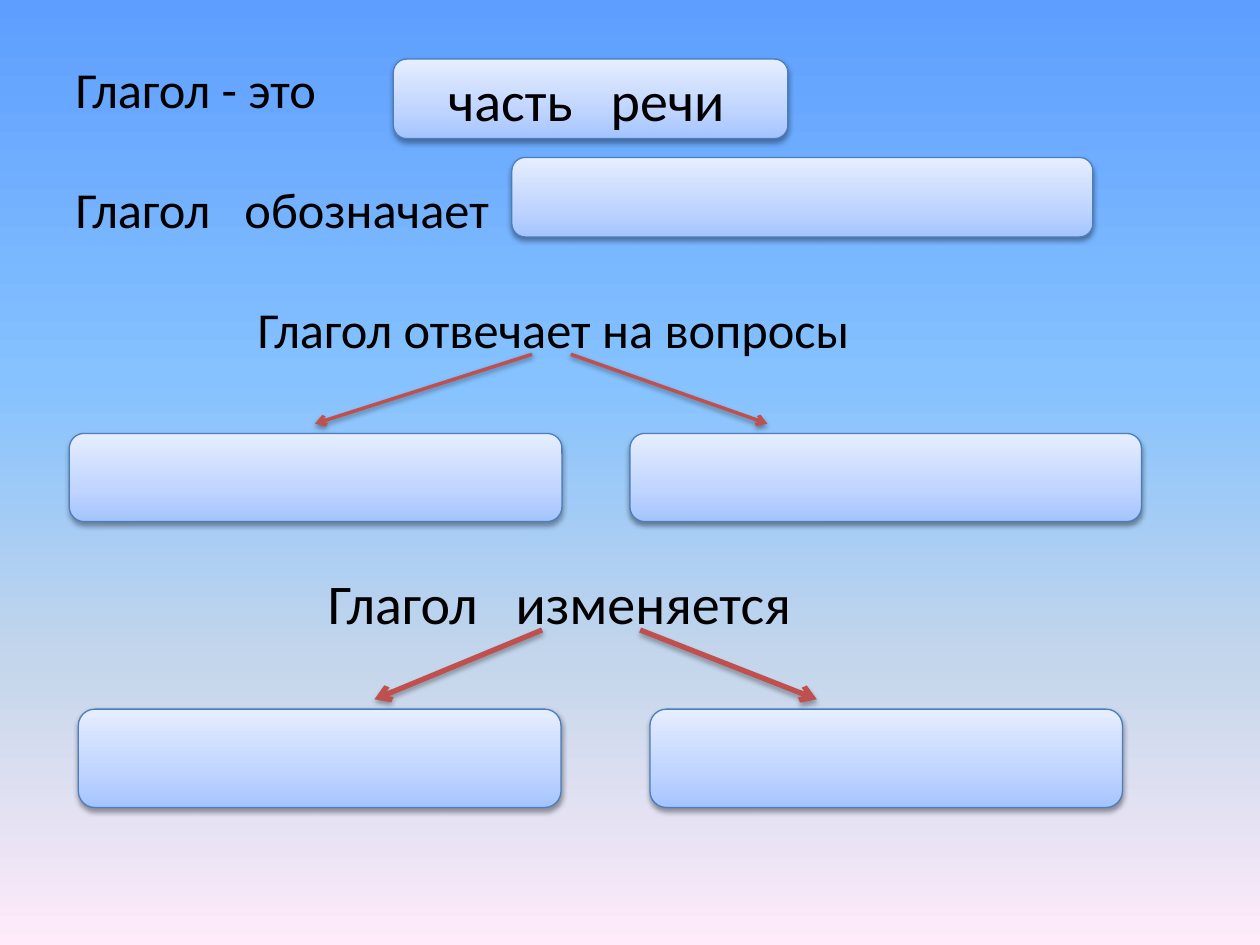
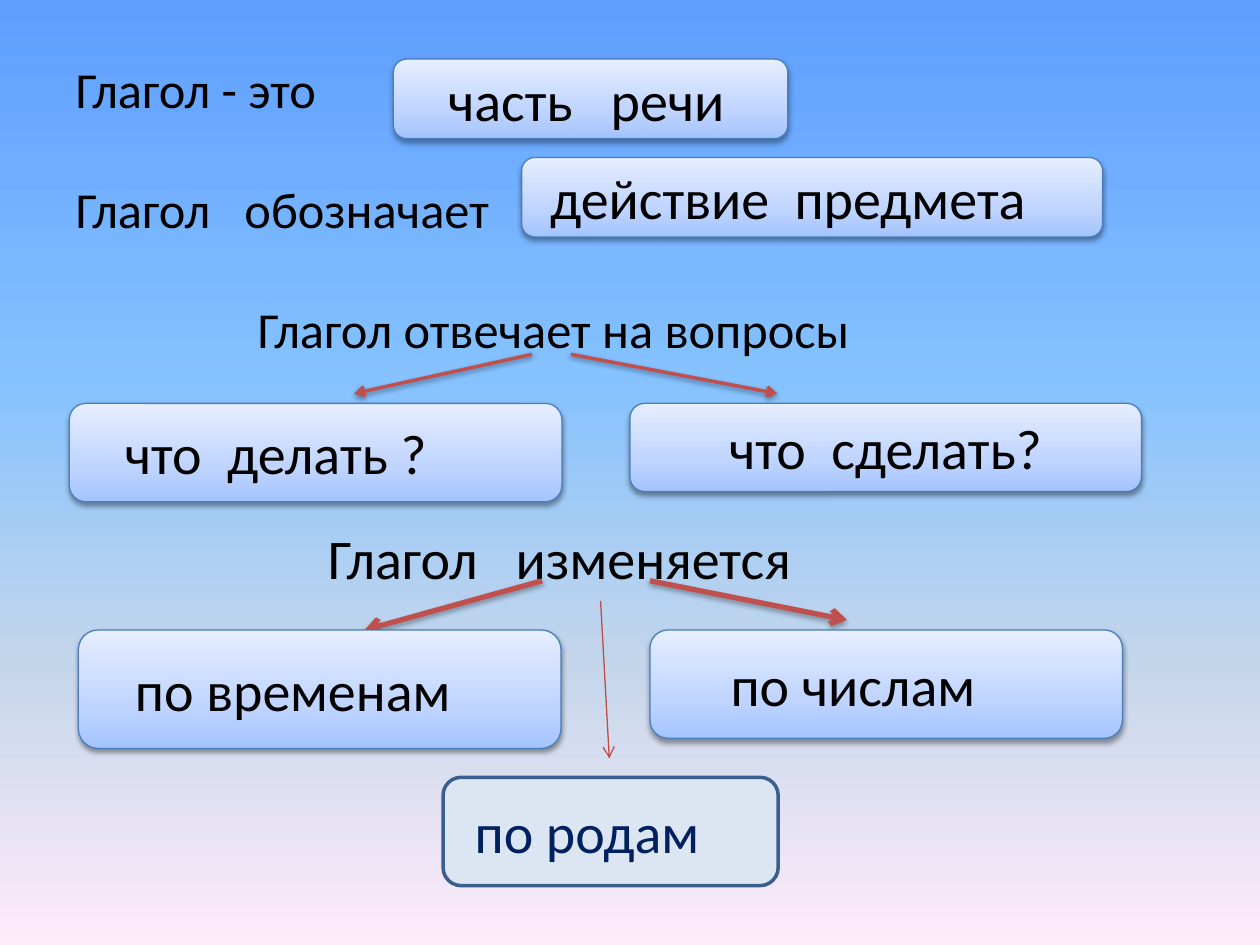
from typing import NamedTuple
from lxml import etree
from pptx import Presentation
from pptx.dml.color import RGBColor
from pptx.enum.shapes import MSO_CONNECTOR as Link, MSO_SHAPE as Form
from pptx.enum.text import MSO_ANCHOR as Anchor, PP_ALIGN as Align
from pptx.oxml import parse_xml
from pptx.oxml.ns import nsdecls, qn
from pptx.util import Pt

FONT = "Calibri"
BLACK, NAVY, RED, BRICK = "000000", "002060", "C0504D", "BF4C48"
EDGE, PALE, STEEL = "4B7EBC", "DCE6F2", "3A5F8C"
SKY = [(0, "5E9EFF"), (40, "85C2FF"), (70, "C4D6EB"), (100, "FFEBFA")]
GLOSS = [(0, "A4C4FF"), (35, "BFD4FF"), (100, "E6EEFF")]
PLATE, ROUND = Form.FLOWCHART_ALTERNATE_PROCESS, Form.ROUNDED_RECTANGLE


class Branch(NamedTuple):
    start: float
    tip: float
    drop: float
    left: float
    width: float
    height: float
    text: str = ""
    indent: float = 0
    align: Align = Align.LEFT
    form: Form = PLATE


def tint(code):
    return RGBColor.from_string(code)


def blend(fill, root, stops, angle):
    fill.gradient()
    old = root.find(".//" + qn("a:gradFill"))
    marks = "".join(
        f'<a:gs pos="{spot * 1000}"><a:srgbClr val="{code}"/></a:gs>'
        for spot, code in stops)
    new = parse_xml(
        f'<a:gradFill {nsdecls("a")} rotWithShape="1"><a:gsLst>{marks}</a:gsLst>'
        f'<a:lin ang="{angle * 60000}" scaled="0"/></a:gradFill>')
    old.getparent().replace(old, new)


def shade(shape, alpha=38, dist=1.6):
    props = shape.element.spPr
    for old in props.findall(qn("a:effectLst")):
        props.remove(old)
    cast = etree.SubElement(props, qn("a:effectLst"))
    if alpha:
        cast.append(parse_xml(
            f'<a:outerShdw {nsdecls("a")} blurRad="{Pt(3.1)}" dist="{Pt(dist)}" '
            f'dir="5400000" rotWithShape="0"><a:srgbClr val="{BLACK}">'
            f'<a:alpha val="{alpha * 1000}"/></a:srgbClr></a:outerShdw>'))


def write(para, text, size=32, color=BLACK, align=Align.LEFT, indent=0, before=0):
    para.alignment = align
    para.space_before = Pt(before)
    props = para._p.get_or_add_pPr()
    props.set("marL", str(Pt(indent)))
    props.set("indent", "0")
    run = para.add_run()
    run.text = text
    run.font.name = FONT
    run.font.size = Pt(size)
    run.font.color.rgb = tint(color)


def label(slide, left, top, width, height):
    frame = slide.shapes.add_textbox(
        Pt(left), Pt(top), Pt(width), Pt(height)).text_frame
    frame.word_wrap = True
    frame.margin_left = frame.margin_right = 0
    frame.margin_top = frame.margin_bottom = 0
    return frame


def card(slide, left, top, width, height, text="", form=PLATE, flat=False, **style):
    shape = slide.shapes.add_shape(form, Pt(left), Pt(top), Pt(width), Pt(height))
    shape.shadow.inherit = False
    if flat:
        shape.fill.solid()
        shape.fill.fore_color.rgb = tint(PALE)
    else:
        blend(shape.fill, shape.element, GLOSS, 270)
    shape.line.color.rgb = tint(STEEL if flat else EDGE)
    shape.line.width = Pt(2 if flat else 0.75)
    if not flat:
        shade(shape)
    if text:
        frame = shape.text_frame
        frame.word_wrap = True
        frame.vertical_anchor = Anchor.MIDDLE
        write(frame.paragraphs[0], text, **style)


def arrow(slide, start, end, width, color=RED, **cast):
    line = slide.shapes.add_connector(
        Link.STRAIGHT, *(Pt(part) for part in (*start, *end)))
    line.line.color.rgb = tint(color)
    line.line.width = Pt(width)
    tail = etree.SubElement(line.line._get_or_add_ln(), qn("a:tailEnd"))
    tail.set("type", "arrow")
    shade(line, **cast)


def intro(slide, left, top, shift, deed=""):
    frame = label(slide, left, top, 640, 175)
    rows = [("Глагол - это", 0), ("Глагол   обозначает", 0),
            ("Глагол отвечает на вопросы", 104)]
    for at, (text, indent) in enumerate(rows):
        para = frame.add_paragraph() if at else frame.paragraphs[0]
        write(para, text, size=28.8, indent=indent, before=34 if at else 0)
    card(slide, left + 181.6, top + 0.6, 225.4, 45.4, "часть   речи", indent=22)
    card(slide, left + shift, top + 56.8, 332, 45.4, deed, indent=7)


def fork(slide, left, top, gap, width, limbs, **cast):
    for limb in limbs:
        arrow(slide, (left + limb.start, top),
              (left + limb.tip, top + limb.drop), width, **cast)
        card(slide, left + limb.left, top + gap, limb.width, limb.height,
             limb.text, limb.form, indent=limb.indent, align=limb.align)


def change(slide, left, top, lift, gap, limbs):
    frame = label(slide, left + 142.6, top - lift, 345, 40)
    write(frame.paragraphs[0], "Глагол   изменяется")
    fork(slide, left, top, gap, 3, limbs, alpha=35, dist=1.8)


def gender(slide, left, top):
    arrow(slide, (left + 90, top), (left + 95, top + 90), 0.75, BRICK, alpha=0)
    card(slide, left, top + 100.8, 191.5, 61.9, "по родам",
         flat=True, color=NAVY, indent=8)


def main():
    deck = Presentation()
    deck.slide_width, deck.slide_height = Pt(720), Pt(540)
    base = deck.slide_master
    blend(base.background.fill, base.element, SKY, 90)
    quiz, key = (deck.slides.add_slide(deck.slide_layouts[6]) for _ in range(2))

    intro(quiz, 43.2, 33.2, 249.3)
    fork(quiz, 39.6, 202.5, 45.2, 2, [
        Branch(264.4, 140.4, 39.6, 0, 281.5, 50.4, form=ROUND),
        Branch(286.6, 398.9, 39.6, 320.4, 292.3, 50.4)])
    change(quiz, 44.8, 360, 35, 45.2, [
        Branch(265, 169.2, 39.6, 0, 275.8, 56.2),
        Branch(321, 422, 39.6, 326.6, 270, 56.2)])

    intro(key, 43.2, 33.2, 254.9, "действие  предмета")
    fork(key, 39.6, 202.5, 28, 2, [
        Branch(264.4, 162.7, 22.4, 0, 281.5, 56.2, "что  делать ?", 22, form=ROUND),
        Branch(286.6, 404.6, 22.4, 320.4, 292.3, 50.4, "что  сделать?",
               align=Align.CENTER)])
    change(key, 44.8, 331.9, 33, 28.1, [
        Branch(265, 163.5, 28.1, 0, 275.8, 67.7, "по временам", 22),
        Branch(326.6, 439.2, 22.4, 326.6, 270, 61.9, "по числам", 36)])
    gender(key, 253.2, 343.4)
    deck.save("out.pptx")


if __name__ == "__main__":
    main()
